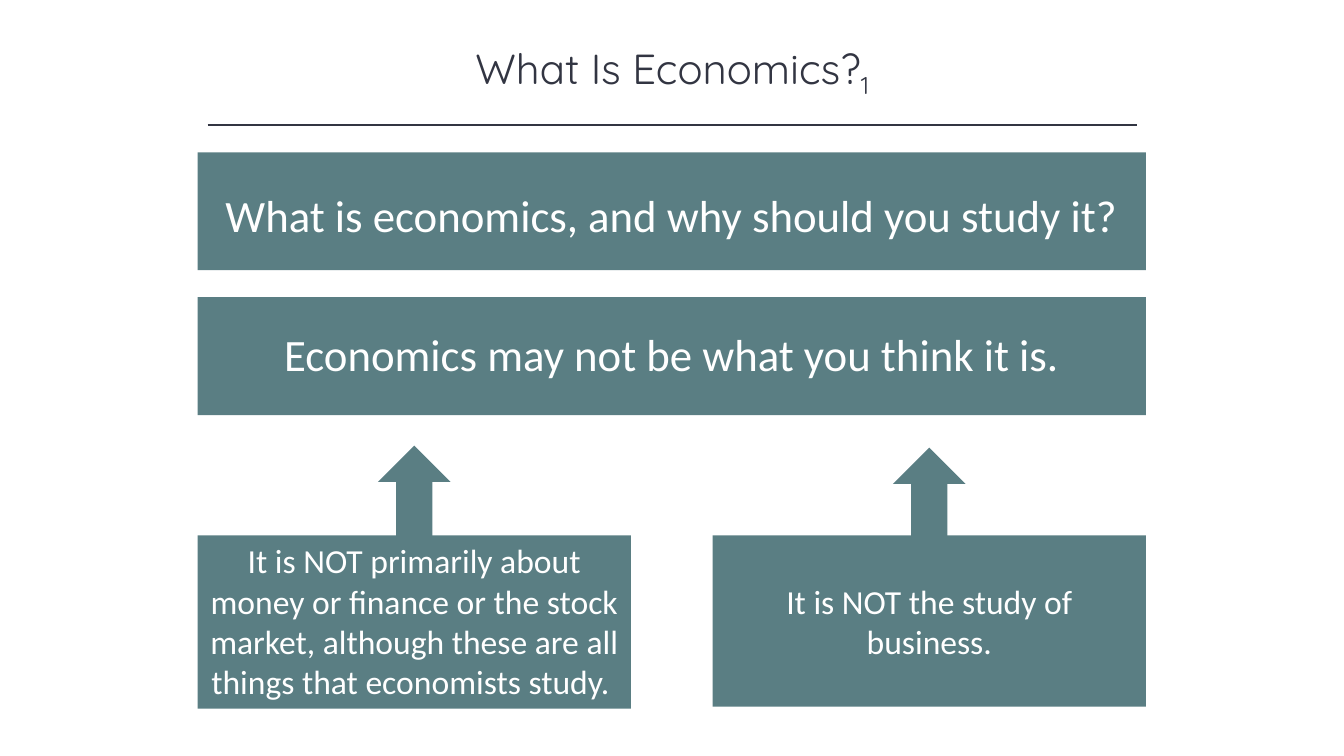
from dataclasses import dataclass

from lxml.etree import SubElement
from pptx import Presentation
from pptx.dml.color import RGBColor as Rgb
from pptx.enum.shapes import MSO_CONNECTOR as Link, MSO_SHAPE as Kind
from pptx.enum.text import MSO_ANCHOR as Anchor, MSO_AUTO_SIZE as Fit, PP_ALIGN as Align
from pptx.oxml.ns import qn
from pptx.shapes.autoshape import Shape
from pptx.shapes.shapetree import GroupShapes as Group
from pptx.slide import Slide
from pptx.util import Cm, Pt


@dataclass(frozen=True)
class Theme:
    ink: Rgb = Rgb(0x32, 0x35, 0x42)
    teal: Rgb = Rgb(0x5A, 0x7E, 0x83)
    white: Rgb = Rgb(0xFF, 0xFF, 0xFF)
    head: str = "Quicksand"
    body: str = "Calibri"
    title: Pt = Pt(30)
    large: Pt = Pt(32)
    small: Pt = Pt(24)


@dataclass(frozen=True)
class Bar:
    top: float
    inset: float
    text: str


@dataclass(frozen=True)
class Note:
    left: float
    high: float
    peak: float
    text: str
    anchor: Anchor


THEME = Theme()
LEFT, WIDE = 4.98, 23.9
BAR_HIGH, PAD = 2.97, 0.36
NOTE_TOP, NOTE_WIDE = 13.49, 10.92
ARROW_WIDE, ARROW_HIGH = 1.83, 2.31

BARS = (
    Bar(3.84, 0.76, "What is economics, and why should you study it?"),
    Bar(7.49, 0.61, "Economics may not be what you think it is."),
)
NOTES = (
    Note(LEFT, 4.37, 11.23,
         "It is NOT primarily about money or finance or the stock market, "
         "although these are all things that economists study. ", Anchor.TOP),
    Note(LEFT + WIDE - NOTE_WIDE, 4.32, 11.28,
         "It is NOT the study of business.", Anchor.MIDDLE),
)


def block(group: Group, kind: Kind, x: float, y: float, w: float, h: float) -> Shape:
    shape = group.add_shape(kind, Cm(x), Cm(y), Cm(w), Cm(h))
    shape.shadow.inherit = False
    shape.fill.solid()
    shape.fill.fore_color.rgb = THEME.teal
    shape.line.fill.background()
    return shape


def write(shape: Shape, text: str, face: str, size: Pt, color: Rgb,
          anchor: Anchor = Anchor.TOP) -> None:
    frame = shape.text_frame
    frame.word_wrap = True
    frame.auto_size = Fit.SHAPE_TO_FIT_TEXT
    frame.vertical_anchor = anchor
    para = frame.paragraphs[0]
    para.alignment = Align.CENTER
    para.add_run().text = text
    para.font.name = face
    para.font.size = size
    para.font.color.rgb = color


def draw_head(slide: Slide) -> None:
    box = slide.shapes.add_textbox(Cm(4.24), Cm(0.94), Cm(25.4), Cm(1.55))
    write(box, "What Is Economics?", THEME.head, THEME.title, THEME.ink)
    mark = box.text_frame.paragraphs[0].add_run()
    mark.text = "1"
    mark.font._element.set("baseline", "-25000")

    rule = slide.shapes.add_connector(
        Link.STRAIGHT, Cm(5.23), Cm(3.15), Cm(28.65), Cm(3.15))
    rule.line.color.rgb = THEME.ink
    rule.line.width = Pt(1)
    SubElement(rule._element.spPr, qn("a:effectLst"))


def draw_bar(slide: Slide, bar: Bar) -> None:
    group = slide.shapes.add_group_shape().shapes
    block(group, Kind.RECTANGLE, LEFT, bar.top, WIDE, BAR_HIGH)
    label = block(group, Kind.RECTANGLE, LEFT + PAD, bar.top + bar.inset,
                  WIDE - 2 * PAD, 1.63)
    write(label, bar.text, THEME.body, THEME.large, THEME.white)


def draw_note(slide: Slide, note: Note) -> None:
    group = slide.shapes.add_group_shape().shapes
    block(group, Kind.UP_ARROW, note.left + (NOTE_WIDE - ARROW_WIDE) / 2,
          note.peak, ARROW_WIDE, ARROW_HIGH)
    box = block(group, Kind.RECTANGLE, note.left, NOTE_TOP, NOTE_WIDE, note.high)
    write(box, note.text, THEME.body, THEME.small, THEME.white, note.anchor)


def main() -> None:
    deck = Presentation()
    deck.slide_width, deck.slide_height = Cm(33.87), Cm(19.05)
    slide = deck.slides.add_slide(deck.slide_layouts[6])

    # Title and rule
    draw_head(slide)
    # Question and answer bars
    for bar in BARS:
        draw_bar(slide, bar)
    # Notes with arrows pointing up
    for note in NOTES:
        draw_note(slide, note)

    deck.save("out.pptx")


if __name__ == "__main__":
    main()
